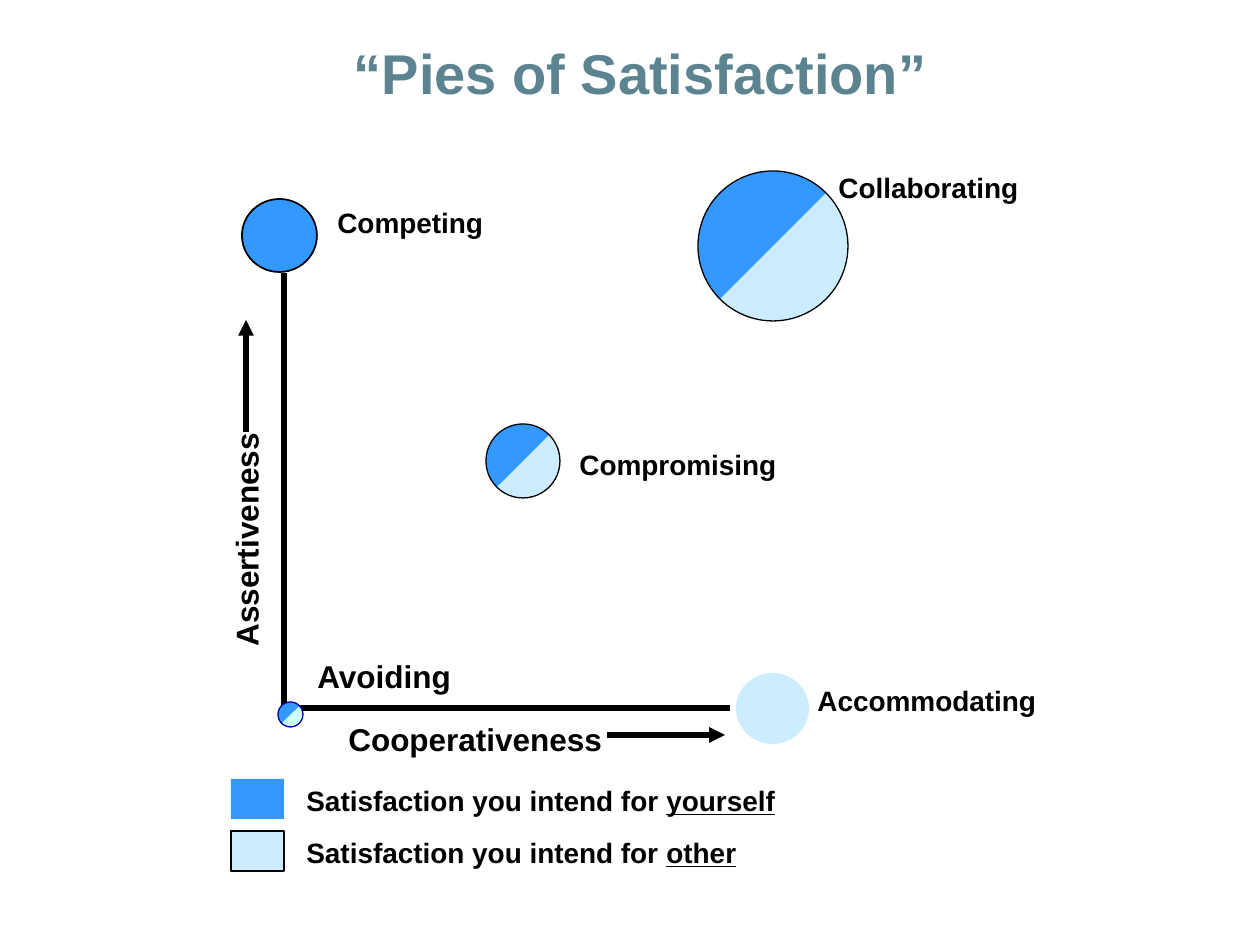
from pptx import Presentation
from pptx.dml.color import RGBColor
from pptx.enum.shapes import MSO_CONNECTOR, MSO_SHAPE
from pptx.enum.text import MSO_ANCHOR, PP_ALIGN
from pptx.oxml.ns import qn
from pptx.util import Pt
from lxml import etree

LINE = MSO_CONNECTOR.STRAIGHT
RECT, OVAL, CHORD = MSO_SHAPE.RECTANGLE, MSO_SHAPE.OVAL, MSO_SHAPE.CHORD
LEFT, CENTER = PP_ALIGN.LEFT, PP_ALIGN.CENTER
TOP, BOTTOM = MSO_ANCHOR.TOP, MSO_ANCHOR.BOTTOM
PX = 914400 / 126
THEME = {
    "font": "Arial", "title": 32, "axis": 18, "label": 16,
    "head": "5C8390", "ink": "000000", "paper": "FFFFFF", "navy": "000099",
    "self": "3399FF", "other": "CCECFF", "pale": "CCFFFF",
}

deck = Presentation()
deck.slide_width, deck.slide_height = round(1260 * PX), round(945 * PX)
slide = deck.slides.add_slide(deck.slide_layouts[6])
shapes = slide.shapes


def draw(kind, box, fill=None, edge=None, width=0.75):
    """Add a preset shape; a missing fill or edge is left blank."""
    shape = shapes.add_shape(kind, *[round(n * PX) for n in box])
    shape.shadow.inherit = False
    if fill:
        shape.fill.solid()
        shape.fill.fore_color.rgb = RGBColor.from_string(THEME[fill])
    else:
        shape.fill.background()
    if edge:
        shape.line.color.rgb = RGBColor.from_string(THEME[edge])
        shape.line.width = Pt(width)
    else:
        shape.line.fill.background()
    return shape


def write(text, box, size="label", ink="ink", under="", align=LEFT, turn=0):
    """Add one line of bold text, with an underlined ending if given."""
    area = shapes.add_textbox(*[round(n * PX) for n in box])
    area.rotation = turn
    frame = area.text_frame
    frame.word_wrap = align == CENTER
    frame.vertical_anchor = BOTTOM if align == CENTER else TOP
    para = frame.paragraphs[0]
    para.alignment = align
    for part in filter(None, (text, under)):
        run = para.add_run()
        run.text = part
        run.font.name = THEME["font"]
        run.font.size = Pt(THEME[size])
        run.font.bold = True
        run.font.underline = True if part == under else None
        run.font.color.rgb = RGBColor.from_string(THEME[ink])


write("“Pies of Satisfaction”", (189, 32, 903, 80), "title", "head", align=CENTER)

# Axes and their direction arrows
for x1, y1, x2, y2, arrow in (
    (284, 273, 284, 708, False),
    (284, 708, 730, 708, False),
    (246, 432, 246, 320, True),
    (607, 735, 725, 735, True),
):
    line = shapes.add_connector(LINE, *[round(n * PX) for n in (x1, y1, x2, y2)])
    line.line.color.rgb = RGBColor.from_string(THEME["ink"])
    line.line.width = Pt(3)
    if arrow:
        etree.SubElement(line.get_or_add_ln(), qn("a:tailEnd"), type="triangle")
    etree.SubElement(line.element.spPr, qn("a:effectLst"))

write("Cooperativeness", (336, 714, 280, 50), "axis")
write("Assertiveness", (126, 514, 240, 50), "axis", turn=270)

# Single-colour pies
draw(OVAL, (242, 199, 75, 73), "self", "ink", 1)
draw(OVAL, (735, 672, 75, 73), "other", "paper", 1)

# Shared pies: two halves split on the diagonal, then the rim
for x, y, size, light, edge in (
    (698, 171, 150, "other", "ink"),
    (486, 424, 74, "other", "ink"),
    (278, 702, 25, "pale", "navy"),
):
    box = (x, y, size, size)
    for fill, start, end in ((light, 315, 135), ("self", 135, 315)):
        half = draw(CHORD, box, fill)
        # Angles are stored in 60000ths of a degree, adjustments in 100000ths
        half.adjustments[0] = start * 0.6
        half.adjustments[1] = end * 0.6
    draw(OVAL, box, edge=edge)

for text, box, size in (
    ("Competing", (325, 199, 228, 47), "label"),
    ("Collaborating", (826, 164, 205, 47), "label"),
    ("Compromising", (567, 441, 223, 47), "label"),
    ("Avoiding", (305, 651, 160, 50), "axis"),
    ("Accommodating", (805, 677, 244, 47), "label"),
):
    write(text, box, size)

# Legend
for row, (word, fill, edge, wide) in enumerate((
    ("yourself", "self", None, 495), ("other", "other", "ink", 456),
)):
    top = 779 + 52 * row
    draw(RECT, (231, top, 53, 40), fill, edge)
    write("Satisfaction you intend for ", (294, top - 2, wide, 47), under=word)

deck.save("out.pptx")
